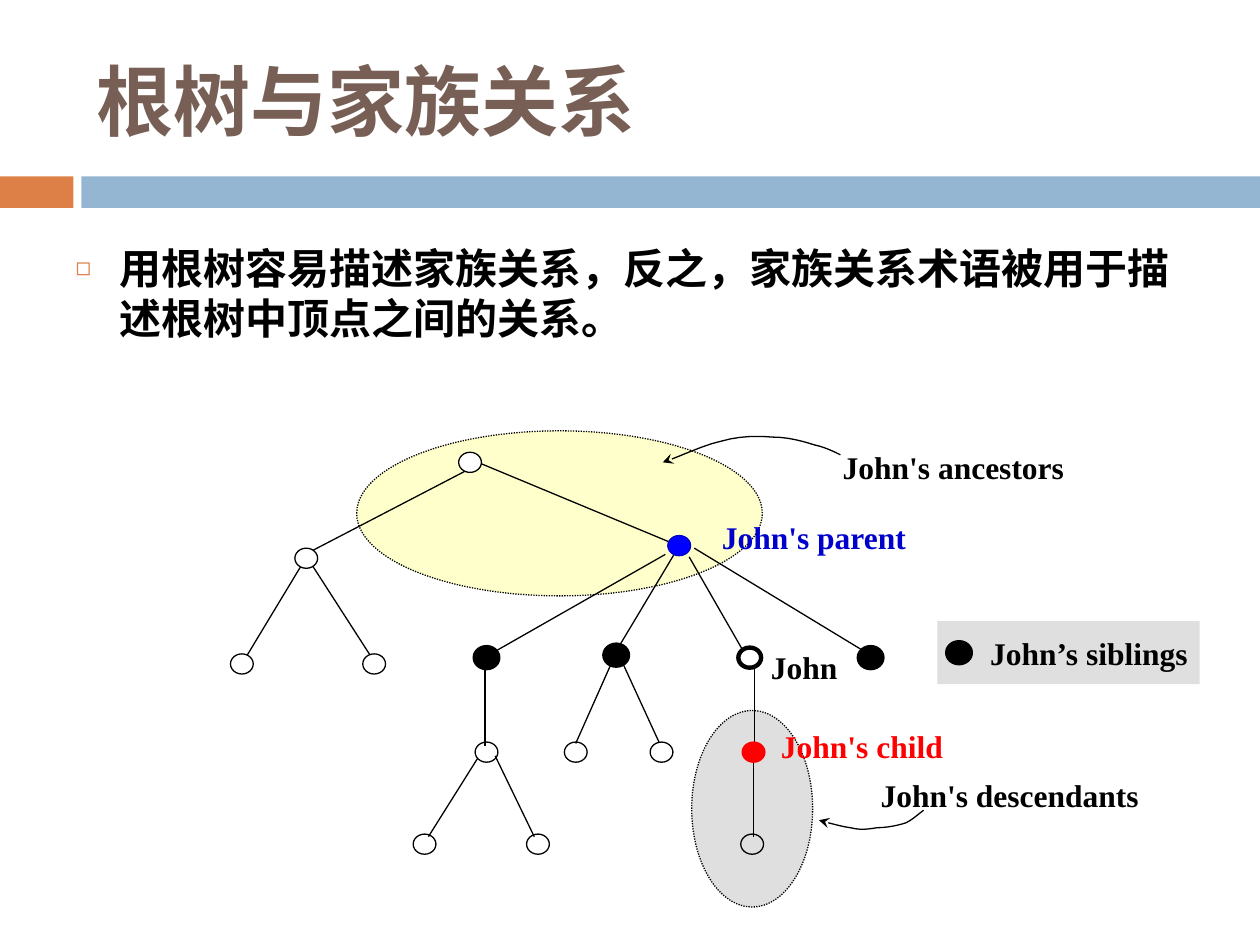
from dataclasses import dataclass
from typing import NamedTuple, Optional

from lxml.etree import SubElement
from pptx import Presentation
from pptx.dml.color import RGBColor
from pptx.enum.dml import MSO_LINE
from pptx.enum.shapes import MSO_CONNECTOR, MSO_SHAPE
from pptx.enum.text import MSO_ANCHOR, MSO_AUTO_SIZE, PP_ALIGN
from pptx.oxml.ns import qn
from pptx.util import Pt


@dataclass(frozen=True)
class Theme:
    title: str = "775F55"
    orange: str = "DD8047"
    band: str = "94B6D2"
    ink: str = "000000"
    white: str = "FFFFFF"
    blue: str = "0000FF"
    dark_blue: str = "0000CC"
    red: str = "FF0000"
    yellow: str = "FFFF99"
    grey: str = "C0C0C0"
    heading_font: str = "Calibri"
    label_font: str = "Times New Roman"
    title_size: float = 44
    body_size: float = 24
    label_size: float = 18
    thin: float = 0.75
    john_line: float = 2.5
    sibling_line: float = 3


THEME = Theme()
NODE_WIDTH, NODE_HEIGHT = 13, 11.5


class Frame(NamedTuple):
    left: float
    top: float
    width: float
    height: float


class Point(NamedTuple):
    x: float
    y: float


@dataclass(frozen=True)
class Node:
    x: float
    y: float
    fill: Optional[str] = None
    line: str = THEME.ink
    weight: float = THEME.thin


@dataclass(frozen=True)
class Label:
    text: str
    frame: Frame
    color: str = THEME.ink
    align: PP_ALIGN = PP_ALIGN.JUSTIFY


def sibling(x: float, y: float) -> Node:
    return Node(x, y, THEME.ink, weight=THEME.sibling_line)


HALOS = [
    (Frame(395.3, 406, 69.1, 112.3), THEME.grey),
    (Frame(203.8, 246.2, 231.8, 94.3), THEME.yellow),
]
NODES = [
    Node(268.6, 264.2, THEME.white),
    Node(175, 319, THEME.white),
    Node(138.2, 379.4, THEME.white),
    Node(213.8, 379.4, THEME.white),
    Node(388.1, 311.8, THEME.blue, THEME.dark_blue),
    sibling(278, 375.8),
    sibling(352.1, 374.4),
    Node(428.4, 375.8, weight=THEME.john_line),
    sibling(497.5, 375.8),
    Node(278, 429.8),
    Node(329, 429.8),
    Node(378, 429.8),
    Node(430.6, 429.8, THEME.red, THEME.red),
    Node(242.6, 482.4),
    Node(307.4, 482.4),
    Node(429.8, 482.4),
]
EDGES = [
    (Point(275, 265), Point(382.3, 309.6)),
    (Point(265.7, 269.3), Point(178.6, 314.6)),
    (Point(172.1, 323.3), Point(140.4, 375.8)),
    (Point(178.6, 323.3), Point(212.4, 375.8)),
    (Point(380.2, 316.8), Point(283, 372.2)),
    (Point(385.2, 316.8), Point(354.2, 368.6)),
    (Point(393.8, 318.2), Point(424.8, 372.2)),
    (Point(396.7, 313.2), Point(493.9, 372.2)),
    (Point(277.2, 380.2), Point(277.2, 426.2)),
    (Point(349.2, 379.4), Point(329, 424.8)),
    (Point(356.4, 380.2), Point(376.6, 424.1)),
    (Point(431.3, 380.2), Point(431.3, 424.8)),
    (Point(272.9, 433.4), Point(244.8, 478.1)),
    (Point(283, 432), Point(305.3, 478.1)),
    (Point(430.6, 434.2), Point(430.6, 478.1)),
]
LABELS = [
    Label("John", Frame(433.4, 366.5, 61.2, 30.2)),
    Label("John's child", Frame(439.2, 411.8, 127.4, 30.2), THEME.red),
    Label("John's parent", Frame(405.4, 292.3, 141.8, 30.2), THEME.dark_blue),
    Label("John's ancestors", Frame(474.5, 252.7, 180, 30.2)),
    Label("John's descendants", Frame(496.1, 440, 185.8, 30.2)),
    Label("John’s siblings", Frame(558.7, 358.6, 138.2, 28.8), align=PP_ALIGN.LEFT),
]
# Cubic curves: a start point, then two controls and an end for each piece.
ANCESTORS_ARROW = [Point(*pair) for pair in (
    (480.2, 259.9), (475.9, 257.8), (471.6, 255.6), (465.1, 254.2),
    (458.6, 252), (450, 249.8), (441.4, 249.8),
    (432.7, 249.1), (422.6, 249.1), (412.6, 252),
    (401.8, 254.2), (385.9, 262.1), (378.7, 264.2))]
DESCENDANTS_ARROW = [Point(*pair) for pair in (
    (527.8, 463), (524.9, 465.1), (522, 468), (517.7, 470.2),
    (513.4, 471.6), (506.9, 473), (501.1, 473),
    (496.1, 473.8), (491.8, 474.5), (486, 473),
    (480.2, 472.3), (470.9, 469.4), (468, 468.7))]


def style_runs(para, font: str, size: float, color: str) -> None:
    for span in para.runs:
        span.font.name, span.font.size, span.font.bold = font, Pt(size), True
        span.font.color.rgb = RGBColor.from_string(color)


def place(box, frame: Frame) -> None:
    box.left, box.top, box.width, box.height = map(Pt, frame)


def set_line(line, color: str = THEME.ink, weight: float = THEME.thin) -> None:
    line.color.rgb = RGBColor.from_string(color)
    line.width = Pt(weight)


def add_area(shapes, kind: MSO_SHAPE, frame: Frame, fill: Optional[str], alpha: int = 100):
    """Add a borderless shape; alpha is its opacity in percent."""
    area = shapes.add_shape(kind, *map(Pt, frame))
    area.shadow.inherit = False
    area.line.fill.background()
    if fill is None:
        area.fill.background()
        return area
    area.fill.solid()
    area.fill.fore_color.rgb = RGBColor.from_string(fill)
    if alpha < 100:
        color = area._element.spPr.find(f"{qn('a:solidFill')}/{qn('a:srgbClr')}")
        SubElement(color, qn("a:alpha"), val=str(alpha * 1000))
    return area


def add_node(shapes, node: Node) -> None:
    frame = Frame(node.x - NODE_WIDTH / 2, node.y - NODE_HEIGHT / 2, NODE_WIDTH, NODE_HEIGHT)
    set_line(add_area(shapes, MSO_SHAPE.OVAL, frame, node.fill).line, node.line, node.weight)


def add_edge(shapes, start: Point, end: Point) -> None:
    edge = shapes.add_connector(MSO_CONNECTOR.STRAIGHT, *map(Pt, start + end))
    set_line(edge.line)
    SubElement(edge._element.spPr, qn("a:effectLst"))


def curve_points(knots: list[Point], steps: int = 6) -> list[Point]:
    """Sample a chain of cubic curves, leaving out its start."""
    points = []
    for first in range(0, len(knots) - 1, 3):
        for step in range(1, steps + 1):
            t = step / steps
            weights = ((1 - t) ** 3, 3 * t * (1 - t) ** 2, 3 * t * t * (1 - t), t ** 3)
            pairs = list(zip(weights, knots[first:first + 4]))
            points.append(Point(sum(w * k.x for w, k in pairs), sum(w * k.y for w, k in pairs)))
    return points


def add_curved_arrow(shapes, knots: list[Point]) -> None:
    builder = shapes.build_freeform(*map(Pt, knots[0]))
    builder.add_line_segments([(Pt(x), Pt(y)) for x, y in curve_points(knots)], close=False)
    arrow = builder.convert_to_shape()
    arrow.shadow.inherit = False
    arrow.fill.background()
    set_line(arrow.line)
    SubElement(arrow.line._get_or_add_ln(), qn("a:tailEnd"), type="stealth")


def add_label(shapes, label: Label) -> None:
    box = shapes.add_textbox(*map(Pt, label.frame))
    box.text_frame.word_wrap = True
    para = box.text_frame.paragraphs[0]
    para.text, para.alignment = label.text, label.align
    style_runs(para, THEME.label_font, THEME.label_size, label.color)


def fill_placeholder(box, frame: Frame, text: str, size: float, color: str, anchor: MSO_ANCHOR):
    place(box, frame)
    box.text_frame.text = text
    box.text_frame.vertical_anchor = anchor
    box.text_frame.auto_size = MSO_AUTO_SIZE.NONE
    para = box.text_frame.paragraphs[0]
    para.alignment = PP_ALIGN.LEFT
    style_runs(para, THEME.heading_font, size, color)
    return para


def add_bullet(para) -> None:
    para.space_before = Pt(7)
    props = para._p.get_or_add_pPr()
    props.set("marL", str(Pt(25)))
    props.set("indent", str(Pt(-25)))
    SubElement(SubElement(props, qn("a:buClr")), qn("a:srgbClr"), val=THEME.orange)
    SubElement(props, qn("a:buSzPct"), val="60000")
    SubElement(props, qn("a:buChar"), char="◻")


def main() -> None:
    deck = Presentation()
    deck.slide_width, deck.slide_height = Pt(720), Pt(540)
    page = deck.slides.add_slide(deck.slide_layouts[1])
    shapes = page.shapes

    fill_placeholder(shapes.title, Frame(48, 18, 642, 78), "根树与家族关系",
                     THEME.title_size, THEME.title, MSO_ANCHOR.MIDDLE)
    add_bullet(fill_placeholder(
        page.placeholders[1], Frame(36, 135, 648, 72),
        "用根树容易描述家族关系，反之，家族关系术语被用于描述根树中顶点之间的关系。",
        THEME.body_size, THEME.ink, MSO_ANCHOR.TOP))
    add_area(shapes, MSO_SHAPE.RECTANGLE, Frame(0, 100.8, 42, 18), THEME.orange)
    add_area(shapes, MSO_SHAPE.RECTANGLE, Frame(46.5, 100.8, 673.5, 18), THEME.band)

    for frame, fill in HALOS:
        halo = add_area(shapes, MSO_SHAPE.OVAL, frame, fill, alpha=50)
        set_line(halo.line)
        halo.line.dash_style = MSO_LINE.ROUND_DOT
    for start, end in EDGES:
        add_edge(shapes, start, end)
    for node in NODES:
        add_node(shapes, node)
    for knots in (ANCESTORS_ARROW, DESCENDANTS_ARROW):
        add_curved_arrow(shapes, knots)

    add_area(shapes, MSO_SHAPE.RECTANGLE, Frame(535.7, 355, 149.8, 36), THEME.grey, alpha=50)
    add_node(shapes, sibling(548, 373))
    for label in LABELS:
        add_label(shapes, label)
    deck.save("out.pptx")


if __name__ == "__main__":
    main()
